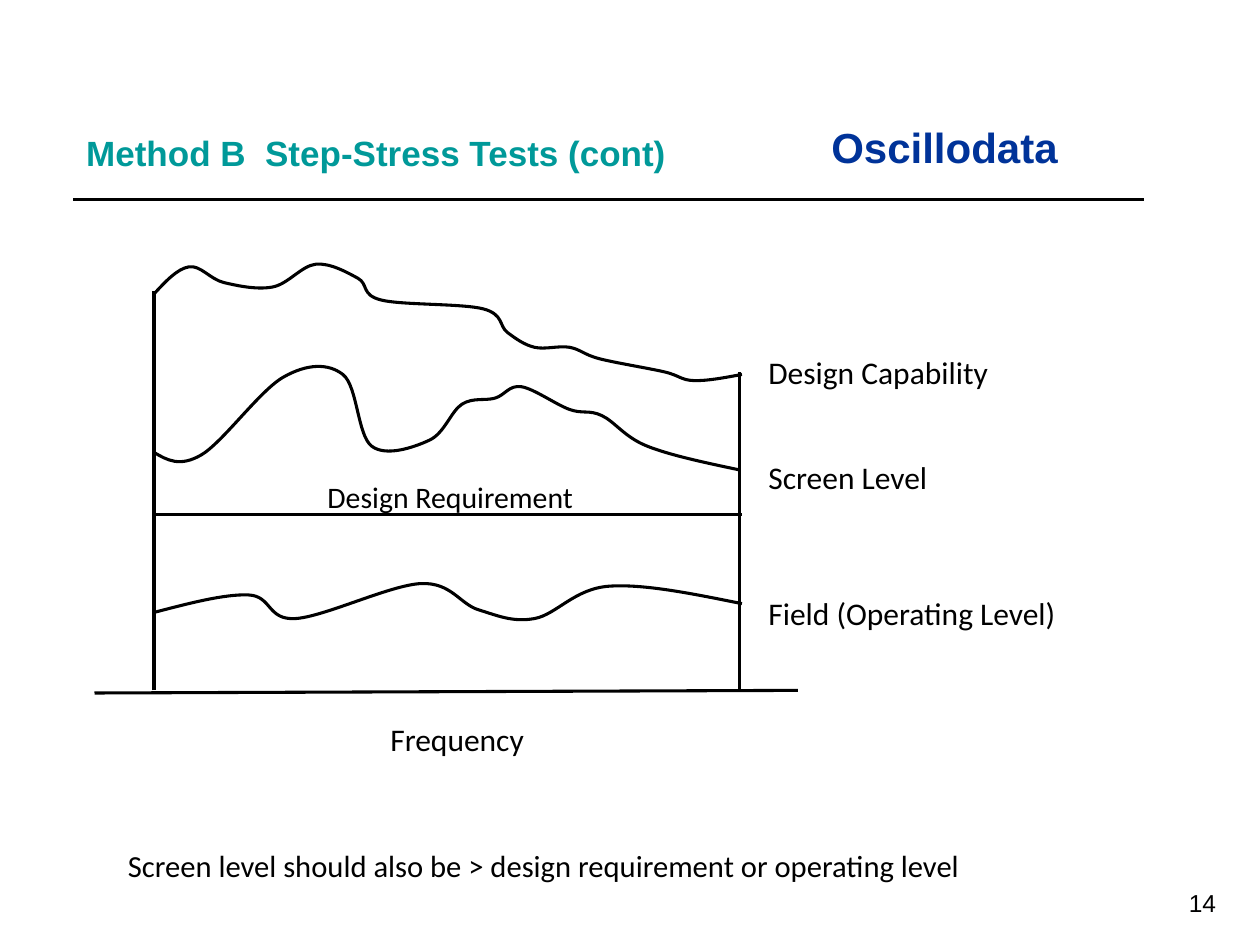
from lxml import etree
from pptx import Presentation
from pptx.dml.color import RGBColor
from pptx.enum.shapes import MSO_CONNECTOR
from pptx.enum.text import MSO_ANCHOR, PP_ALIGN
from pptx.oxml.ns import qn
from pptx.util import Pt

STRAIGHT = MSO_CONNECTOR.STRAIGHT
TOP, MIDDLE = MSO_ANCHOR.TOP, MSO_ANCHOR.MIDDLE
LEFT, RIGHT = PP_ALIGN.LEFT, PP_ALIGN.RIGHT

BLACK = RGBColor(0x00, 0x00, 0x00)
NUMBER_BLACK = RGBColor(0x01, 0x00, 0x00)
TEAL = RGBColor(0x00, 0x99, 0x99)
NAVY = RGBColor(0x00, 0x33, 0x99)
RULE_WIDTH, PLOT_WIDTH = 2.25, 1.75

AXES = [
    ((0, 246), (402, 244.5)),
    ((34, 244.5), (34, 16.5)),
    ((368.5, 244.5), (368.5, 62.5)),
    ((34, 144), (370, 144)),
]
FIELD = [(34, 200), (88, 190), (115, 203.5), (186.5, 183.5), (219.5, 198.5),
         (251.5, 203.5), (294, 185), (370, 195)]
SCREEN = [(34, 108.5), (61, 110), (108, 65.5), (142, 64), (158.5, 105),
          (191.5, 101.5), (210, 81), (229, 77.5), (244, 71), (271.5, 84),
          (290, 87.5), (316, 105), (368.5, 118.5)]
CAPABILITY = [(34, 18), (54, 2.5), (74, 11.5), (102, 14), (126.5, 1),
              (150.5, 9), (164, 21.5), (222, 26.5), (236, 40), (251.5, 48.5),
              (271.5, 48.5), (288.5, 55), (325.5, 62.5), (342.5, 67.5),
              (370, 64)]
LABELS = [
    ("Frequency", 162, 258, 138, 18),
    ("Field (Operating Level)", 378, 186, 198, 18),
    ("Design Capability", 378, 48, 198, 18),
    ("Screen Level", 378, 108, 198, 18),
    ("Design Requirement", 126, 120, 198, 17),
]


def write(tf, text, size, font, color, bold=False, align=LEFT):
    p = tf.paragraphs[0]
    p.alignment = align
    r = p.add_run()
    r.text = text
    r.font.size = Pt(size)
    r.font.name = font
    r.font.bold = bold
    r.font.color.rgb = color
    return p


def add_text(s, box, text, size, font, color, bold=False, align=LEFT,
             anchor=TOP):
    tf = s.shapes.add_textbox(*map(Pt, box)).text_frame
    tf.word_wrap = True
    tf.vertical_anchor = anchor
    write(tf, text, size, font, color, bold, align)
    return tf


def add_line(shapes, start, end, width):
    line = shapes.add_connector(STRAIGHT, *map(Pt, start + end))
    line.line.color.rgb = BLACK
    line.line.width = Pt(width)
    etree.SubElement(line._element.spPr, qn("a:effectLst"))


def midpoint(a, b):
    return (a[0] + b[0]) / 2, (a[1] + b[1]) / 2


def bezier_points(knots):
    handles = []
    for before, knot, after in zip(knots, knots[1:], knots[2:]):
        dx, dy = (after[0] - before[0]) / 6, (after[1] - before[1]) / 6
        handles.append(((knot[0] - dx, knot[1] - dy),
                        (knot[0] + dx, knot[1] + dy)))
    points = [midpoint(knots[0], handles[0][0])]
    for knot, (arrive, leave) in zip(knots[1:], handles):
        points += [arrive, knot, leave]
    return points + [midpoint(handles[-1][1], knots[-1]), knots[-1]]


def add_curve(shapes, knots):
    start, *points = [(Pt(x), Pt(y)) for x, y in
                      [knots[0]] + bezier_points(knots)]
    builder = shapes.build_freeform(*start)
    builder.add_line_segments(points, close=False)
    curve = builder.convert_to_shape()
    curve.shadow.inherit = False
    curve.fill.background()
    curve.line.color.rgb = BLACK
    curve.line.width = Pt(PLOT_WIDTH)
    segments = list(curve._element.iter(qn("a:lnTo")))
    for i in range(0, len(segments), 3):
        bezier = etree.Element(qn("a:cubicBezTo"))
        segments[i].addprevious(bezier)
        for segment in segments[i:i + 3]:
            bezier.append(segment[0])
            segment.getparent().remove(segment)


def add_header(s, left, top, width):
    title = s.shapes.title
    title.left, title.top = Pt(left), Pt(top + 12)
    title.width, title.height = Pt(360), Pt(30)
    tf = title.text_frame
    tf.word_wrap = True
    tf.vertical_anchor = TOP
    p = write(tf, "Method B  Step-Stress Tests (cont)", 20, "Arial", TEAL, True)
    p.line_spacing = 0.7
    add_text(s, (left + 426, top, 186, 36), "Oscillodata", 24, "Arial",
             NAVY, True)
    add_line(s.shapes, (left, top + 48), (left + width, top + 48), RULE_WIDTH)


def add_plot(s, left, top):
    def place(points):
        return [(left + x, top + y) for x, y in points]

    plot = s.shapes.add_group_shape()
    for axis in AXES:
        add_line(plot.shapes, *place(axis), PLOT_WIDTH)
    for knots in (FIELD, SCREEN, CAPABILITY):
        add_curve(plot.shapes, place(knots))
    for text, x, y, width, size in LABELS:
        add_text(s, (left + x, top + y, width, 29), text, size, "Calibri", BLACK)


def add_footer(s, left, top):
    tf = add_text(s, (left, top, 516, 36),
                  "Screen level should also be > design requirement "
                  "or operating level", 17.5, "Calibri", BLACK)
    tf.margin_top = Pt(10)
    add_text(s, (left + 486, top + 24, 150, 36), "14", 14, "Arial",
             NUMBER_BLACK, align=RIGHT, anchor=MIDDLE)


def main():
    prs = Presentation()
    prs.slide_width, prs.slide_height = Pt(720), Pt(540)
    s = prs.slides.add_slide(prs.slide_layouts[5])
    add_header(s, 42, 66, 612)
    add_plot(s, 54, 150)
    add_footer(s, 66, 474)
    prs.save("out.pptx")


if __name__ == "__main__":
    main()
